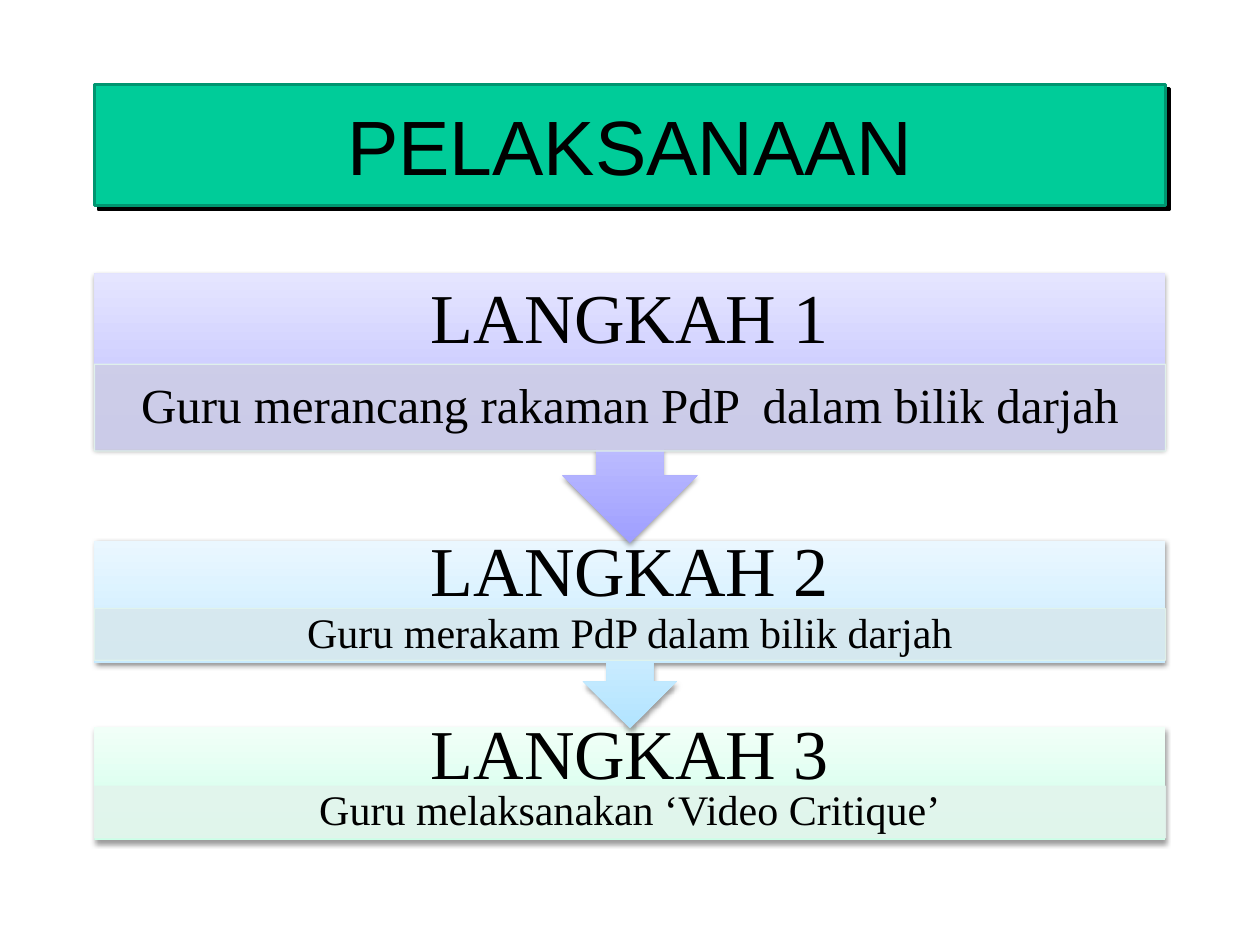
from lxml import etree
from pptx import Presentation
from pptx import util as u
from pptx.dml import color
from pptx.enum import shapes, text
from pptx.oxml import ns

LEFT, WIDTH = 0.75, 8.5
SERIF = "Times New Roman"
STEPS = [
    dict(heading="LANGKAH 1", detail="Guru merancang rakaman PdP  dalam bilik darjah",
         top=2.17, height=2.14, heading_height=0.75, detail_top=2.89, detail_height=0.69,
         size=28, stops=("9F9FFF", "BBBBFF", "E5E5FF"), tint="CDCDE6", arrow=True),
    dict(heading="LANGKAH 2", detail="Guru merakam PdP dalam bilik darjah",
         top=4.29, height=1.49, heading_height=0.52, detail_top=4.83, detail_height=0.41,
         size=24, stops=("B2E4FF", "C8EBFF", "EAF7FF"), tint="D7E8EE", arrow=True),
    dict(heading="LANGKAH 3", detail="Guru melaksanakan ‘Video Critique’",
         top=5.77, height=0.9, heading_height=0.48, detail_top=6.24, detail_height=0.41,
         size=24, stops=("CCFFE8", "DAFFEE", "F1FFF8"), tint="E2F4EC", arrow=False),
]


def rgb(value):
    return color.RGBColor.from_string(value)


def child(parent, tag, **attributes):
    return etree.SubElement(parent, ns.qn(tag), {k: str(v) for k, v in attributes.items()})


def box(top, height):
    return [u.Inches(value) for value in (LEFT, top, WIDTH, height)]


def add_shadow(shape, blur, distance, angle, opacity):
    shape.shadow.inherit = False
    effects = shape._element.spPr.find(ns.qn("a:effectLst"))
    shadow = child(effects, "a:outerShdw", blurRad=u.Pt(blur), dist=u.Pt(distance),
                   dir=angle * 60000, algn="ctr", rotWithShape=0)
    black = child(shadow, "a:srgbClr", val="000000")
    child(black, "a:alpha", val=opacity * 1000)


def fill_gradient(shape, colours):
    shape.fill.gradient()
    shape.fill.gradient_angle = 90
    stops = shape._element.spPr.find(ns.qn("a:gradFill")).find(ns.qn("a:gsLst"))
    for stop in list(stops):
        stops.remove(stop)
    for position, colour in zip((0, 35, 100), colours):
        child(child(stops, "a:gs", pos=position * 1000), "a:srgbClr", val=colour)


def set_opacity(fill_parent, opacity):
    colour = fill_parent.find(ns.qn("a:solidFill")).find(ns.qn("a:srgbClr"))
    child(colour, "a:alpha", val=opacity * 1000)


def write(shape, words, size, font, inset=0.1, spacing=None):
    frame = shape.text_frame
    frame.word_wrap = True
    frame.vertical_anchor = text.MSO_ANCHOR.MIDDLE
    frame.margin_left = frame.margin_right = u.Inches(inset)
    frame.margin_top = frame.margin_bottom = 0
    paragraph = frame.paragraphs[0]
    paragraph.alignment = text.PP_ALIGN.CENTER
    paragraph.line_spacing = spacing
    run = paragraph.add_run()
    run.text = words
    run.font.size = u.Pt(size)
    run.font.name = font
    run.font.color.rgb = rgb("000000")


def place_title(slide, top, height):
    title = slide.shapes.title
    title.left, title.top, title.width, title.height = box(top, height)
    title.fill.solid()
    title.fill.fore_color.rgb = rgb("00CC99")
    title.line.color.rgb = rgb("009570")
    title.line.width = u.Pt(2)
    add_shadow(title, blur=0, distance=3.2, angle=45, opacity=100)
    write(title, "PELAKSANAAN", 44, "Arial")


def add_step(slide, step):
    kind = shapes.MSO_SHAPE.DOWN_ARROW_CALLOUT if step["arrow"] else shapes.MSO_SHAPE.RECTANGLE
    panel = slide.shapes.add_shape(kind, *box(step["top"], step["height"]))
    fill_gradient(panel, step["stops"])
    panel.line.fill.background()
    add_shadow(panel, blur=3.1, distance=1.6, angle=90, opacity=38)

    heading = slide.shapes.add_textbox(*box(step["top"], step["heading_height"]))
    write(heading, step["heading"], 40, SERIF, 0.31, 0.9)

    detail = slide.shapes.add_shape(shapes.MSO_SHAPE.RECTANGLE,
                                    *box(step["detail_top"], step["detail_height"]))
    detail.shadow.inherit = False
    detail.fill.solid()
    detail.fill.fore_color.rgb = rgb(step["tint"])
    detail.line.color.rgb = rgb("E2F4EC")
    detail.line.width = u.Pt(0.75)
    properties = detail._element.spPr
    set_opacity(properties, 90)
    set_opacity(properties.find(ns.qn("a:ln")), 90)
    write(detail, step["detail"], step["size"], SERIF, 0.2, 0.9)


def main():
    presentation = Presentation()
    presentation.slide_width = u.Inches(10)
    presentation.slide_height = u.Inches(7.5)
    slide = presentation.slides.add_slide(presentation.slide_layouts[5])
    place_title(slide, 0.67, 0.96)
    for step in reversed(STEPS):
        add_step(slide, step)
    presentation.save("out.pptx")


if __name__ == "__main__":
    main()
